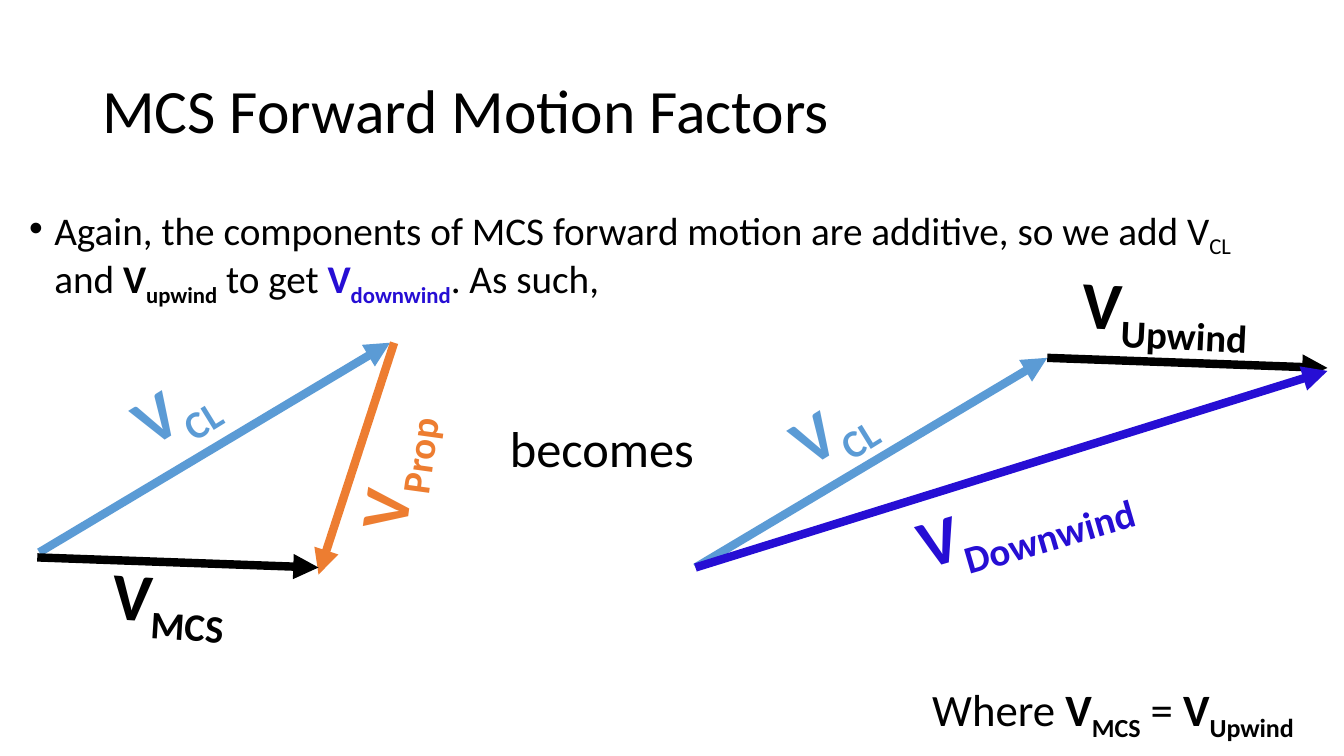
from dataclasses import dataclass

from lxml import etree
from pptx import Presentation
from pptx.dml.color import RGBColor
from pptx.enum.shapes import MSO_CONNECTOR
from pptx.enum.text import MSO_ANCHOR
from pptx.oxml.ns import qn
from pptx.util import Inches, Pt

STRAIGHT = MSO_CONNECTOR.STRAIGHT
TOP = MSO_ANCHOR.TOP
MIDDLE = MSO_ANCHOR.MIDDLE

WIDE, HIGH = Inches(13.333), Inches(7.5)
COLS, ROWS = 160, 90


@dataclass(frozen=True)
class Theme:
    font: str = "Calibri"
    ink: str = "000000"
    sky: str = "5B9BD5"
    rust: str = "ED7D31"
    deep: str = "260ED4"
    title: int = 44
    body: int = 28
    link: int = 36
    note: int = 32
    label: int = 48
    line: int = 6


THEME = Theme()


@dataclass(frozen=True)
class Bit:
    text: str
    color: str = THEME.ink
    bold: bool = False
    sub: bool = False


@dataclass(frozen=True)
class Box:
    col: float
    row: float
    wide: float
    high: float


@dataclass(frozen=True)
class Arrow:
    start: tuple[float, float]
    end: tuple[float, float]
    color: str


@dataclass(frozen=True)
class Label:
    name: str
    col: float
    row: float
    wide: float
    turn: float
    color: str


LEFT = (4.68, 65.76)
PEAK = (46.44, 40.8)
BASE = (82.8, 67.56)
BEND = (124.68, 42.6)

ARROWS = [
    Arrow(LEFT, PEAK, THEME.sky),
    Arrow((46.92, 40.8), (37.92, 68.4), THEME.rust),
    Arrow((4.44, 66.36), (37.92, 67.56), THEME.ink),
    Arrow(BASE, BEND, THEME.sky),
    Arrow(BEND, (158.04, 43.8), THEME.ink),
    Arrow(BASE, (158.04, 44.16), THEME.deep),
]

LABELS = [
    Label("CL", 14.52, 42.72, 12.24, 328.3, THEME.sky),
    Label("Prop", 37.56, 49.92, 17.64, 277.8, THEME.rust),
    Label("MCS", 12.24, 65.64, 17.28, 3.6, THEME.ink),
    Label("CL", 92.76, 45, 12.24, 328.3, THEME.sky),
    Label("Upwind", 127.68, 31.08, 24.72, 2.8, THEME.ink),
    Label("Downwind", 107.64, 55.32, 31.44, 343.8, THEME.deep),
]


def across(col: float) -> int:
    return round(WIDE * col / COLS)


def down(row: float) -> int:
    return round(HIGH * row / ROWS)


def speed(name: str, color: str = THEME.ink, bold: bool = True) -> list[Bit]:
    return [Bit("V", color, bold), Bit(name, color, bold, sub=True)]


def write(slide, box: Box, bits: list[Bit], *, size: int, turn: float = 0,
          anchor=TOP, space: float = 1, bullet: bool = False) -> None:
    shape = slide.shapes.add_textbox(
        across(box.col), down(box.row), across(box.wide), down(box.high))
    shape.rotation = turn
    frame = shape.text_frame
    frame.word_wrap = True
    frame.vertical_anchor = anchor
    para = frame.paragraphs[0]
    para.line_spacing = space
    if bullet:
        props = para._p.get_or_add_pPr()
        props.set("marL", str(Inches(0.25)))
        props.set("indent", str(-Inches(0.25)))
        etree.SubElement(props, qn("a:buFont")).set("typeface", "Arial")
        etree.SubElement(props, qn("a:buChar")).set("char", "•")
    for bit in bits:
        run = para.add_run()
        run.text = bit.text
        run.font.name = THEME.font
        run.font.size = Pt(size)
        run.font.bold = bit.bold
        run.font.color.rgb = RGBColor.from_string(bit.color)
        if bit.sub:
            run._r.get_or_add_rPr().set("baseline", "-25000")


def point(slide, arrow: Arrow) -> None:
    (col, row), (far, low) = arrow.start, arrow.end
    line = slide.shapes.add_connector(
        STRAIGHT, across(col), down(row), across(far), down(low))
    line.line.width = Pt(THEME.line)
    line.line.color.rgb = RGBColor.from_string(arrow.color)
    tail = etree.SubElement(line.line._get_or_add_ln(), qn("a:tailEnd"))
    tail.set("type", "triangle")
    etree.SubElement(line._element.spPr, qn("a:effectLst"))


def main() -> None:
    deck = Presentation()
    deck.slide_width, deck.slide_height = WIDE, HIGH
    slide = deck.slides.add_slide(deck.slide_layouts[6])

    write(slide, Box(11, 4.8, 138, 17.4), [Bit("MCS Forward Motion Factors")],
          size=THEME.title, anchor=MIDDLE, space=0.9)
    body = [
        Bit("Again, the components of MCS forward motion are additive, so we add "),
        *speed("CL", bold=False),
        Bit(" and "),
        *speed("upwind"),
        Bit(" to get "),
        *speed("downwind", THEME.deep),
        Bit(". As such,"),
    ]
    write(slide, Box(2.28, 24, 152.76, 57.12), body,
          size=THEME.body, space=0.9, bullet=True)

    for arrow in ARROWS:
        point(slide, arrow)
    for label in LABELS:
        write(slide, Box(label.col, label.row, label.wide, 10.92),
              speed(label.name, label.color), size=THEME.label, turn=label.turn)

    write(slide, Box(59.52, 49.08, 24.6, 8.52), [Bit("becomes")], size=THEME.link)
    note = [Bit("Where "), *speed("MCS"), Bit(" = "), *speed("Upwind")]
    write(slide, Box(109.8, 80.52, 48.36, 7.68), note, size=THEME.note)

    deck.save("out.pptx")


if __name__ == "__main__":
    main()
